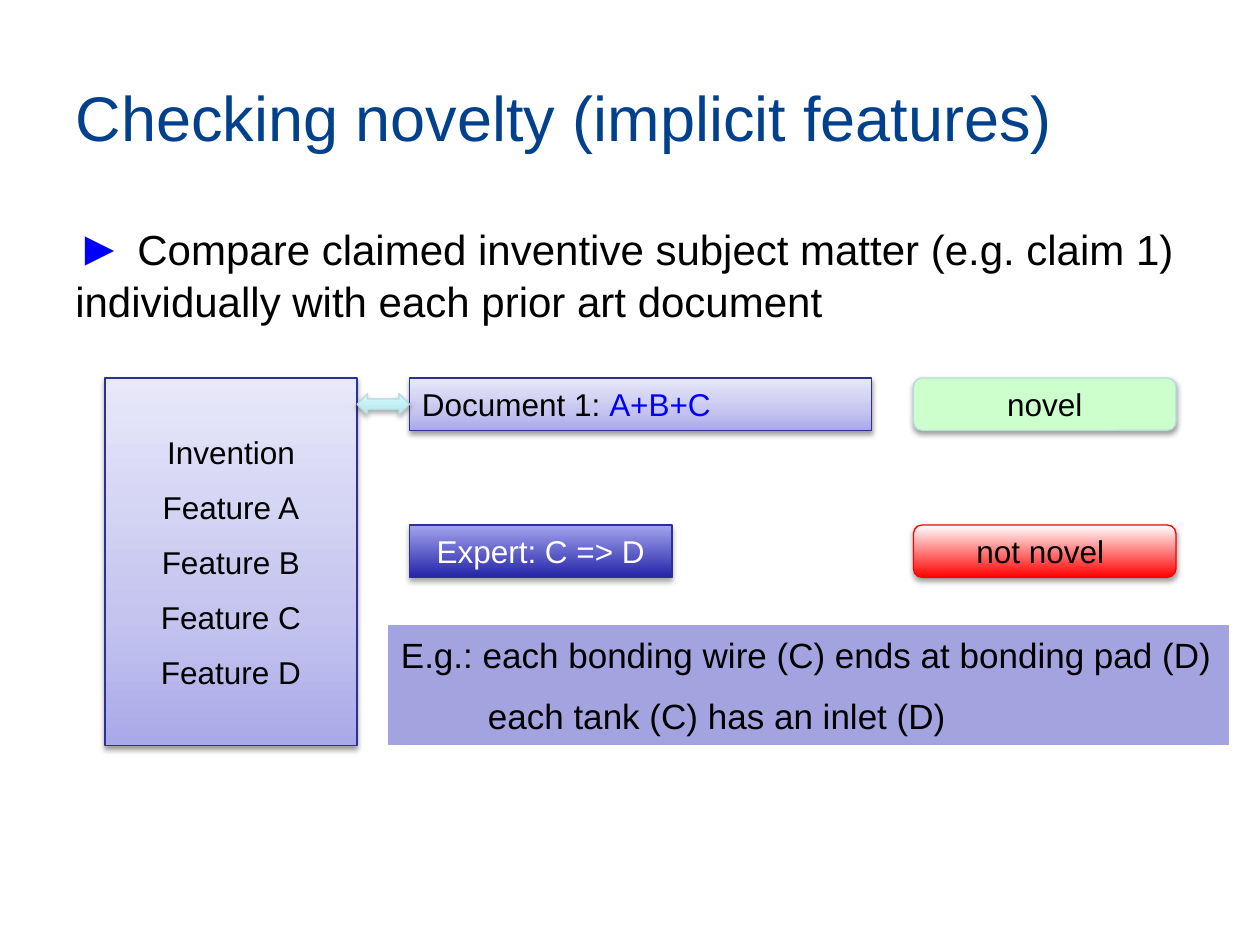
from dataclasses import dataclass
from typing import Optional

from lxml.etree import SubElement
from pptx import Presentation
from pptx.dml.color import RGBColor
from pptx.enum.shapes import MSO_SHAPE as Shape
from pptx.enum.text import MSO_ANCHOR as Anchor, MSO_AUTO_SIZE as AutoSize, PP_ALIGN as Align
from pptx.oxml.ns import qn
from pptx.util import Emu, Inches, Pt

COLUMNS, ROWS = 120, 90


@dataclass(frozen=True)
class Theme:
    font: str = "Arial"
    title_size: int = 36
    marker_size: int = 28
    body_size: int = 24
    note_size: int = 20
    label_size: int = 18
    line_width: float = 0.75
    title: str = "00408C"
    text: str = "000000"
    light_text: str = "FFFFFF"
    accent: str = "0000FF"
    border: str = "2F2F98"
    aqua: str = "B6DCDF"
    red: str = "FF0000"
    note: str = "A3A3E0"
    green: str = "CCFFCC"
    shadow: str = "000000"
    pale_blend: tuple = ((0, "A9A9E9"), (35, "C4C4EF"), (100, "E8E8FA"))
    deep_blend: tuple = ((0, "2424A8"), (100, "A4A4EF"))
    aqua_blend: tuple = ((0, "B5E5E9"), (100, "D3FBFF"))
    red_blend: tuple = ((0, "FF0000"), (100, "FFFFFF"))


THEME = Theme()


@dataclass(frozen=True)
class Area:
    column: float
    row: float
    columns: float
    rows: float


@dataclass(frozen=True)
class Run:
    text: str
    color: Optional[str] = None
    size: Optional[int] = None


@dataclass(frozen=True)
class Box:
    area: Area
    fill: tuple
    line: str
    lines: tuple = ()
    kind: Shape = Shape.RECTANGLE
    color: str = THEME.text
    size: int = THEME.label_size
    align: Align = Align.CENTER
    shadow: Optional[tuple] = (38, 1.6)
    tab: Optional[float] = None


SOFT, RAISED = (38, 1.6), (35, 1.8)
BOXES = (
    Box(Area(10, 36, 24, 35), THEME.pale_blend, THEME.border,
        tuple((Run(text),) for text in
              ("Invention", "Feature A", "Feature B", "Feature C", "Feature D"))),
    Box(Area(87, 36, 25, 5), (THEME.green,), THEME.aqua, ((Run("novel"),),),
        Shape.ROUNDED_RECTANGLE),
    Box(Area(39, 36, 44, 5), THEME.pale_blend, THEME.border,
        ((Run("Document 1: "), Run("A+B+C", THEME.accent)),), align=Align.LEFT),
    Box(Area(34, 37.5, 5, 2), THEME.aqua_blend, THEME.aqua,
        kind=Shape.LEFT_RIGHT_ARROW, shadow=RAISED),
    Box(Area(87, 50, 25, 5), THEME.red_blend, THEME.red, ((Run("not novel "),),),
        Shape.ROUNDED_RECTANGLE, shadow=SOFT),
    Box(Area(39, 50, 25, 5), THEME.deep_blend, THEME.border, ((Run("Expert: C => D"),),),
        color=THEME.light_text, shadow=RAISED),
    Box(Area(37, 59.6, 80, 11.3), (THEME.note,), THEME.note,
        ((Run("E.g.: each bonding wire (C) ends at bonding pad (D)"),),
         (Run("\teach tank (C) has an inlet (D)"),)),
        size=THEME.note_size, align=Align.LEFT, shadow=None, tab=0.69),
)


def rgb(color: str) -> RGBColor:
    return RGBColor.from_string(color)


def place(presentation, area: Area) -> tuple:
    column, row = presentation.slide_width / COLUMNS, presentation.slide_height / ROWS
    return (Emu(round(area.column * column)), Emu(round(area.row * row)),
            Emu(round(area.columns * column)), Emu(round(area.rows * row)))


def set_font(font, size: int, color: str) -> None:
    font.name = THEME.font
    font.size = Pt(size)
    font.color.rgb = rgb(color)


def write(frame, lines: tuple, size: int, color: str, align: Align,
          tab: Optional[float] = None) -> None:
    frame.word_wrap = True
    for index, line in enumerate(lines):
        paragraph = frame.add_paragraph() if index else frame.paragraphs[0]
        paragraph.alignment = align
        if index:
            paragraph.space_before = Pt(size * 0.55)
        if tab:
            tabs = SubElement(paragraph._p.get_or_add_pPr(), qn("a:tabLst"))
            SubElement(tabs, qn("a:tab"), pos=str(Inches(tab)), algn="l")
        set_font(paragraph.font, size, color)
        for item in line:
            run = paragraph.add_run()
            run.text = item.text
            if item.color:
                run.font.color.rgb = rgb(item.color)
            if item.size:
                run.font.size = Pt(item.size)


def paint(shape, fill: tuple) -> None:
    if len(fill) == 1:
        shape.fill.solid()
        shape.fill.fore_color.rgb = rgb(fill[0])
        return
    shape.fill.gradient()
    shape.fill.gradient_angle = 90
    stops = shape._element.spPr.find(qn("a:gradFill")).find(qn("a:gsLst"))
    stops.clear()
    for position, color in fill:
        stop = SubElement(stops, qn("a:gs"), pos=str(position * 1000))
        SubElement(stop, qn("a:srgbClr"), val=color)


def cast_shadow(shape, opacity: int, distance: float) -> None:
    effects = shape._element.spPr.find(qn("a:effectLst"))
    shadow = SubElement(effects, qn("a:outerShdw"), blurRad=str(Pt(3.1)),
                        dist=str(Pt(distance)), dir="5400000", rotWithShape="0")
    color = SubElement(shadow, qn("a:srgbClr"), val=THEME.shadow)
    SubElement(color, qn("a:alpha"), val=str(opacity * 1000))


def draw_box(presentation, slide, box: Box) -> None:
    shape = slide.shapes.add_shape(box.kind, *place(presentation, box.area))
    paint(shape, box.fill)
    shape.line.color.rgb = rgb(box.line)
    shape.line.width = Pt(THEME.line_width)
    shape.shadow.inherit = False
    if box.shadow:
        cast_shadow(shape, *box.shadow)
    shape.text_frame.vertical_anchor = Anchor.MIDDLE
    write(shape.text_frame, box.lines, box.size, box.color, box.align, box.tab)


def main() -> None:
    presentation = Presentation()
    presentation.slide_width, presentation.slide_height = Inches(10), Inches(7.5)
    slide = presentation.slides.add_slide(presentation.slide_layouts[5])

    title = slide.shapes.title
    title.left, title.top, title.width, title.height = place(
        presentation, Area(6, 3.6, 108, 15))
    title.text_frame.auto_size = AutoSize.NONE
    title.text_frame.vertical_anchor = Anchor.MIDDLE
    write(title.text_frame, ((Run("Checking novelty (implicit features)"),),),
          THEME.title_size, THEME.title, Align.LEFT)

    body = slide.shapes.add_textbox(*place(presentation, Area(6, 20, 108, 57)))
    write(body.text_frame, ((
        Run("► ", THEME.accent, THEME.marker_size),
        Run("Compare claimed inventive subject matter (e.g. claim 1) "
            "individually with each prior art document")),),
        THEME.body_size, THEME.text, Align.LEFT)

    for box in BOXES:
        draw_box(presentation, slide, box)
    presentation.save("out.pptx")


if __name__ == "__main__":
    main()
